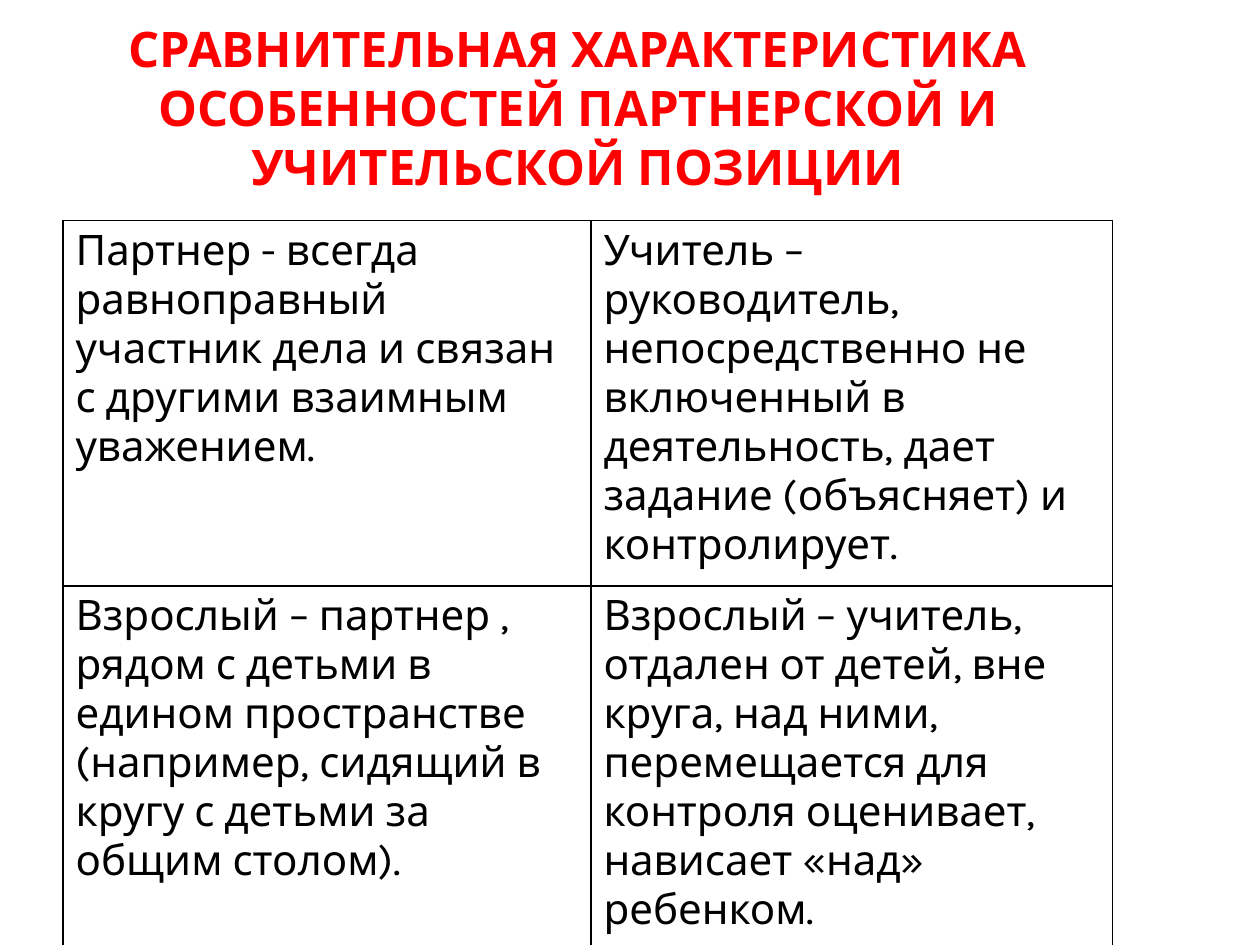
import pptx
import pptx.dml.color
import pptx.enum.text
import pptx.oxml
import pptx.oxml.ns
import pptx.util
from dataclasses import dataclass
from pptx.util import Inches


@dataclass(frozen=True)
class Theme:
    font: str = "Karla"
    title_color: str = "FF0000"
    text_color: str = "000000"
    border_color: str = "000000"
    title_size: int = 28
    text_size: int = 24
    border_width: int = 1


theme = Theme()


def style(paragraph, size, color, bold=False):
    for run in paragraph.runs:
        run.font.name = theme.font
        run.font.size = pptx.util.Pt(size)
        run.font.bold = bold
        run.font.color.rgb = pptx.dml.color.RGBColor.from_string(color)


def add_borders(cell):
    """Draw a solid line on all four sides; call before setting the fill."""
    properties = cell._tc.get_or_add_tcPr()
    for side in ("lnL", "lnR", "lnT", "lnB"):
        properties.append(pptx.oxml.parse_xml(
            f'<a:{side} {pptx.oxml.ns.nsdecls("a")} w="{pptx.util.Pt(theme.border_width)}">'
            f'<a:solidFill><a:srgbClr val="{theme.border_color}"/></a:solidFill></a:{side}>'
        ))


presentation = pptx.Presentation()
presentation.slide_width = Inches(10)
presentation.slide_height = Inches(7.5)
slide = presentation.slides.add_slide(presentation.slide_layouts[6])

heading = slide.shapes.add_textbox(Inches(0.5), Inches(0.23), Inches(8.17), Inches(1.32)).text_frame
heading.word_wrap = True
heading.vertical_anchor = pptx.enum.text.MSO_ANCHOR.BOTTOM
heading.margin_left = heading.margin_right = Inches(0.05)
heading.margin_top = heading.margin_bottom = 0
heading.text = "СРАВНИТЕЛЬНАЯ ХАРАКТЕРИСТИКА ОСОБЕННОСТЕЙ ПАРТНЕРСКОЙ И УЧИТЕЛЬСКОЙ ПОЗИЦИИ"
heading.paragraphs[0].alignment = pptx.enum.text.PP_ALIGN.CENTER
style(heading.paragraphs[0], theme.title_size, theme.title_color, bold=True)

comparison = [
    (
        "Партнер - всегда равноправный участник дела и связан с другими взаимным уважением.",
        "Учитель – руководитель, непосредственно не включенный в деятельность, "
        "дает задание (объясняет) и контролирует.",
    ),
    (
        "Взрослый – партнер , рядом с детьми в едином пространстве "
        "(например, сидящий в кругу с детьми за общим столом).",
        "Взрослый – учитель, отдален от детей, вне круга, над ними, "
        "перемещается для контроля оценивает, нависает «над» ребенком.",
    ),
]
column_widths = (4.19, 4.14)
row_height = 2.56

positions = slide.shapes.add_table(
    len(comparison), len(column_widths), Inches(0.5), Inches(1.75),
    Inches(sum(column_widths)), Inches(row_height * len(comparison)),
).table
positions.first_row = False
positions.horz_banding = False
for column, width in zip(positions.columns, column_widths):
    column.width = Inches(width)

for row, descriptions in enumerate(comparison):
    positions.rows[row].height = Inches(row_height)
    for column, description in enumerate(descriptions):
        cell = positions.cell(row, column)
        add_borders(cell)
        cell.fill.background()
        cell.text_frame.text = description
        style(cell.text_frame.paragraphs[0], theme.text_size, theme.text_color)

presentation.save("out.pptx")
